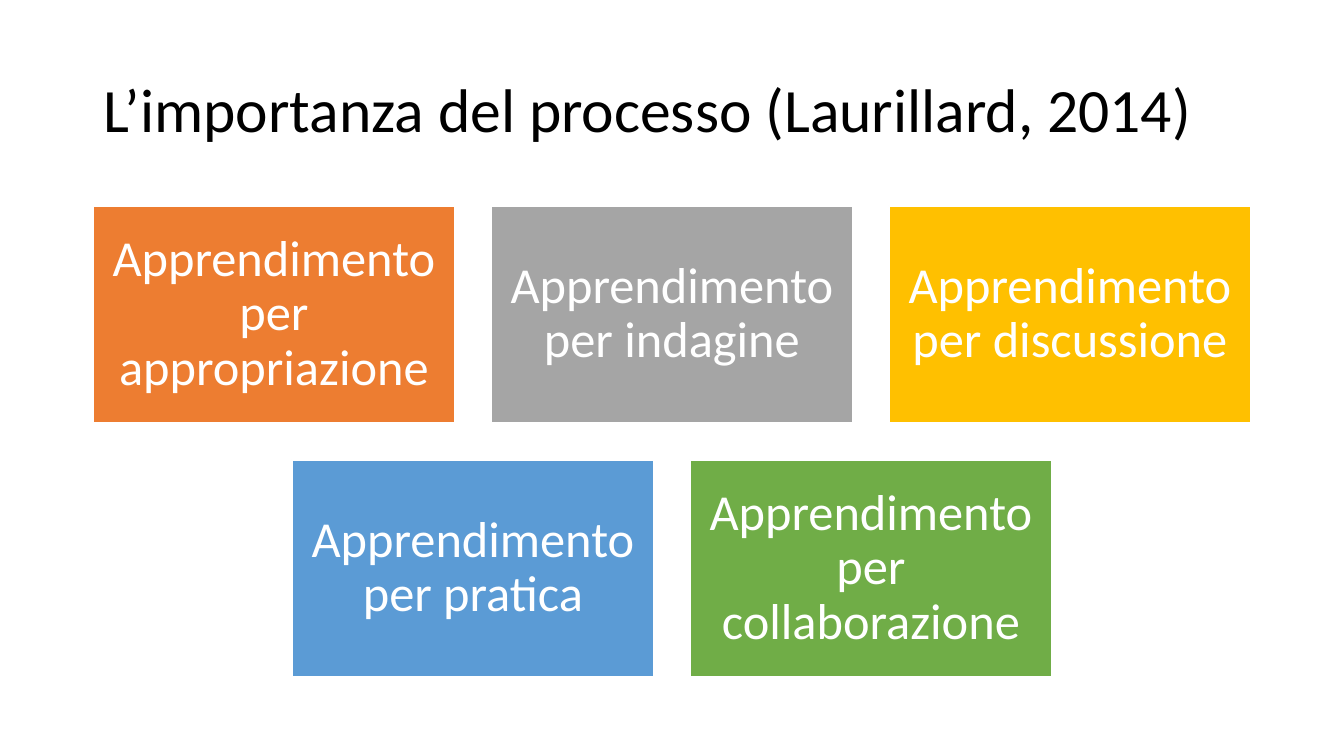
from pptx import Presentation
from pptx.dml.color import RGBColor
from pptx.enum import shapes, text
from pptx.util import Emu, Pt

TITLE = "L’importanza del processo (Laurillard, 2014)"
ROWS = [
    [("Apprendimento per appropriazione", "orange"),
     ("Apprendimento per indagine", "gray"),
     ("Apprendimento per discussione", "gold")],
    [("Apprendimento per pratica", "blue"),
     ("Apprendimento per collaborazione", "green")],
]
COLORS = {
    "orange": "ED7D31", "gray": "A5A5A5", "gold": "FFC000",
    "blue": "5B9BD5", "green": "70AD47",
    "white": "FFFFFF", "black": "000000",
}
WIDE, HIGH = 1344, 756
BOX_W, BOX_H = 362, 217
GAP_X, GAP_Y = 36, 37
TOP, INSET = 206, 15


def px(n):
    return Emu(round(n * 914400 / 100.8))


def color(name):
    return RGBColor.from_string(COLORS[name])


def write(shape, words, size, ink, align):
    frame = shape.text_frame
    frame.text = words
    frame.word_wrap = True
    frame.auto_size = text.MSO_AUTO_SIZE.NONE
    frame.vertical_anchor = text.MSO_ANCHOR.MIDDLE
    para = frame.paragraphs[0]
    para.alignment = align
    para.line_spacing = 0.9
    para.font.name = "Calibri"
    para.font.size = Pt(size)
    para.font.color.rgb = color(ink)
    return frame


def add_box(slide, left, top, words, fill):
    box = slide.shapes.add_shape(
        shapes.MSO_SHAPE.RECTANGLE, px(left), px(top), px(BOX_W), px(BOX_H))
    box.shadow.inherit = False
    box.fill.solid()
    box.fill.fore_color.rgb = color(fill)
    box.line.color.rgb = color("white")
    box.line.width = Pt(1)
    frame = write(box, words, 36, "white", text.PP_ALIGN.CENTER)
    frame.margin_left = frame.margin_right = px(INSET)
    frame.margin_top = frame.margin_bottom = px(INSET)


def main():
    deck = Presentation()
    deck.slide_width, deck.slide_height = px(WIDE), px(HIGH)
    slide = deck.slides.add_slide(deck.slide_layouts[5])
    title = slide.shapes.title
    title.left, title.top = px(93), px(40)
    title.width, title.height = px(1159), px(146)
    write(title, TITLE, 44, "black", text.PP_ALIGN.LEFT)

    for r, row in enumerate(ROWS):
        span = len(row) * (BOX_W + GAP_X) - GAP_X
        left = (WIDE - span) / 2
        top = TOP + r * (BOX_H + GAP_Y)
        for c, (words, fill) in enumerate(row):
            add_box(slide, left + c * (BOX_W + GAP_X), top, words, fill)

    deck.save("out.pptx")


if __name__ == "__main__":
    main()
